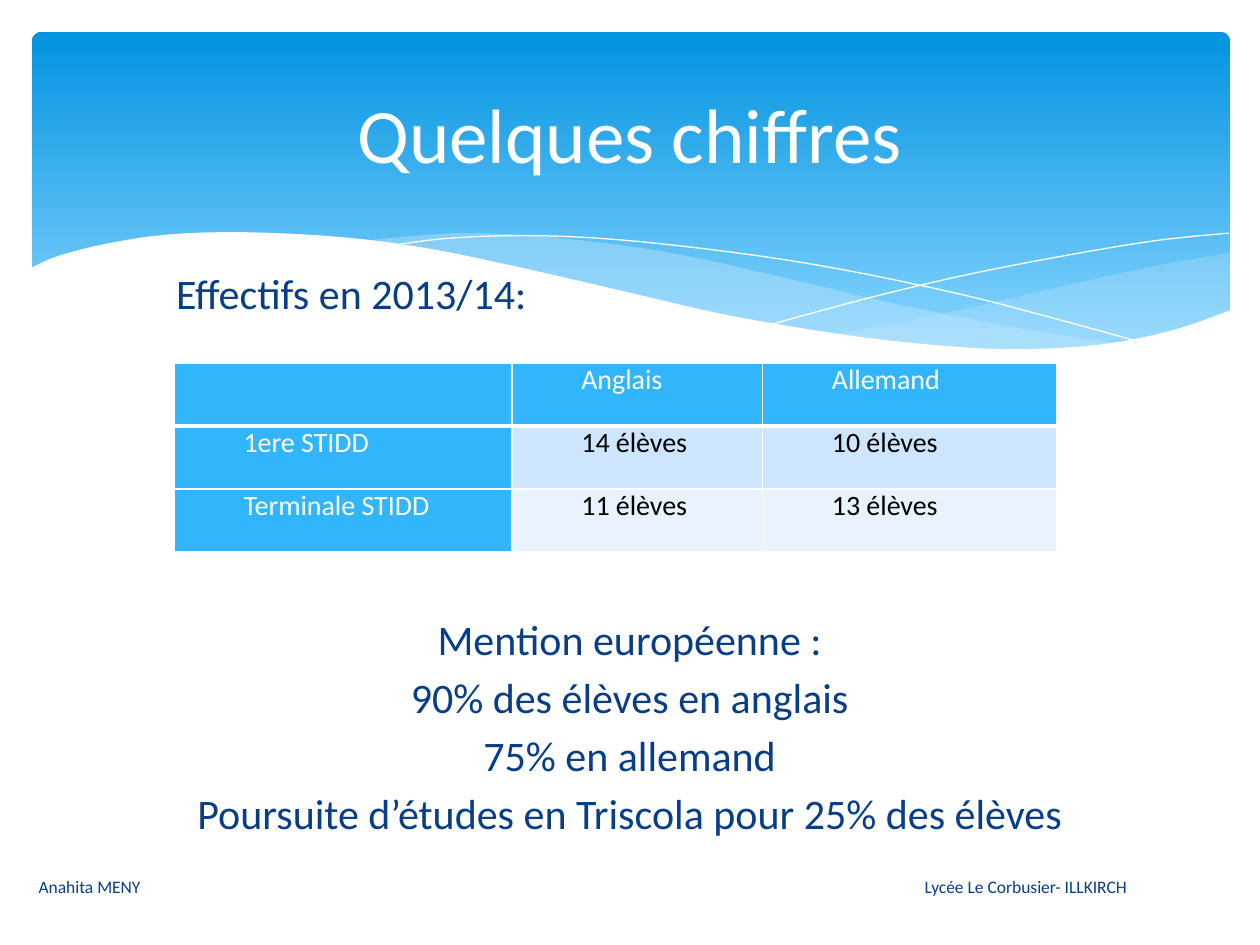
from lxml import etree
from pptx import Presentation
from pptx import util as u
from pptx.dml.color import RGBColor
from pptx.enum import shapes, text
from pptx.oxml.ns import qn

WHITE = RGBColor(0xFF, 0xFF, 0xFF)
BLACK = RGBColor(0, 0, 0)
NAVY = RGBColor(0x07, 0x3E, 0x87)
DEEP = RGBColor(0x02, 0x93, 0xE0)
SKY = RGBColor(0x83, 0xD3, 0xFE)
MIST = RGBColor(0xC6, 0xE7, 0xFC)
CYAN = RGBColor(0x31, 0xB6, 0xFD)
BANDS = [RGBColor(0xCE, 0xE5, 0xFE), RGBColor(0xE8, 0xF3, 0xFF)]

# Banner curves: knots in cm from the banner's top left corner
RIGHT = [
    [(24.15, 4.45), (22.76, 4.7), (21.23, 5.03), (19.15, 5.51), (17.88, 5.79),
     (16.15, 6.1)],
    [(16.15, 6.1), (17.27, 6.25), (18.59, 6.38), (20.04, 6.43), (21.51, 6.32),
     (22.76, 6.1), (23.47, 5.89), (24.15, 5.64)],
]
MIDDLE = [
    [(22.05, 6.3), (19.86, 5.97), (17.3, 5.46), (15.34, 5), (13.46, 4.57),
     (11.79, 4.29), (10.03, 4.11), (8.53, 4.06), (6.63, 4.22)],
    [(6.63, 4.22), (8.05, 4.42), (9.63, 4.72), (11.84, 5.26), (14.2, 5.77),
     (15.88, 6.07), (17.7, 6.32), (19.3, 6.43), (20.65, 6.43), (22.05, 6.3)],
]
FALL = [[(7.21, 4.32), (8.33, 4.17), (9.93, 4.11), (11.79, 4.19), (14.15, 4.45),
         (16.26, 4.78), (18.67, 5.28), (20.47, 5.74), (22.4, 6.27)]]
RISE = [[(14.94, 5.89), (17.02, 5.33), (19.08, 4.85), (21.36, 4.42),
         (22.83, 4.19), (24.13, 4.06)]]
FLOOR = [
    [(24.18, 5.61), (22.99, 6.02), (21.59, 6.3), (19.91, 6.4), (18.26, 6.32),
     (16.33, 6.1), (14.07, 5.72), (12.14, 5.28), (9.98, 4.78), (8, 4.37),
     (6.25, 4.14), (4.27, 4.04), (2.72, 4.09), (1.52, 4.27), (0.53, 4.52),
     (-0.05, 4.78)],
    [(-0.05, 7.72)],
    [(24.18, 7.72)],
]

ROWS = [["", "Anglais", "Allemand"],
        ["1ere STIDD", "14 élèves", "10 élèves"],
        ["Terminale STIDD", "11 élèves", "13 élèves"]]
FACTS = ["Mention européenne :", "90% des élèves en anglais", "75% en allemand",
         "Poursuite d’études en Triscola pour 25% des élèves"]


def write(frame, lines, size, color=NAVY, align=text.PP_ALIGN.LEFT,
          anchor=text.MSO_ANCHOR.TOP, before=0, indent=0, tab=0):
    frame.word_wrap = True
    frame.vertical_anchor = anchor
    for i, line in enumerate(lines):
        para = frame.paragraphs[0] if i == 0 else frame.add_paragraph()
        para.alignment = align
        para.space_before = u.Pt(before)
        run = para.add_run()
        run.text = line
        run.font.name, run.font.size = "Calibri", u.Pt(size)
        run.font.color.rgb = color
        props = para._p.get_or_add_pPr()
        if indent:
            props.set("indent", str(u.Cm(indent)))
        if tab:
            stops = etree.SubElement(props, qn("a:tabLst"))
            etree.SubElement(stops, qn("a:tab"), pos=str(u.Cm(tab)), algn="l")


def label(slide, box, lines, size, **style):
    shape = slide.shapes.add_textbox(*map(u.Cm, box))
    write(shape.text_frame, lines, size, **style)


def ease(knots, steps=4):
    """Catmull-Rom curve through the knots."""
    ends = [knots[0], *knots, knots[-1]]
    pts = [knots[0]]
    for a, b, c, d in zip(ends, ends[1:], ends[2:], ends[3:]):
        for n in range(1, steps + 1):
            t = n / steps
            pts.append(tuple(
                (2 * q + (r - p) * t + (2 * p - 5 * q + 4 * r - s) * t ** 2
                 + (3 * q - p - 3 * r + s) * t ** 3) / 2
                for p, q, r, s in zip(a, b, c, d)))
    return pts


def wave(slide, box, curves, fill=None, alpha=100):
    pts = [(u.Cm(box[0] + x), u.Cm(box[1] + y))
           for knots in curves for x, y in ease(knots)]
    maker = slide.shapes.build_freeform(*pts[0])
    maker.add_line_segments(pts[1:], close=fill is not None)
    shape = maker.convert_to_shape()
    shape.shadow.inherit = False
    if fill is None:
        shape.fill.background()
        shape.line.color.rgb = WHITE
        shape.line.width = u.Pt(0)
        return
    shape.line.fill.background()
    shape.fill.solid()
    shape.fill.fore_color.rgb = fill
    if alpha < 100:
        tint = shape._element.spPr.find(qn("a:solidFill"))[0]
        etree.SubElement(tint, qn("a:alpha"), val=str(alpha * 1000))


def banner(slide, box):
    # Rounded panel, darker at the top
    panel = slide.shapes.add_shape(shapes.MSO_SHAPE.ROUNDED_RECTANGLE,
                                   *map(u.Cm, box))
    panel.adjustments[0] = 0.03
    panel.shadow.inherit = False
    panel.line.fill.background()
    panel.fill.gradient()
    panel.fill.gradient_angle = 270
    for stop, color, place in zip(panel.fill.gradient_stops, (DEEP, SKY), (0, 0.9)):
        stop.color.rgb, stop.position = color, place
    # Waves and hairlines, then the white edge
    wave(slide, box, RIGHT, MIST, 29)
    wave(slide, box, MIDDLE, MIST, 40)
    wave(slide, box, FALL)
    wave(slide, box, RISE)
    wave(slide, box, FLOOR, WHITE)


def edge(cell, bottom):
    props = cell._tc.get_or_add_tcPr()
    for i, side in enumerate(("lnL", "lnR", "lnT", "lnB")):
        width = bottom if side == "lnB" else 1
        line = etree.Element(qn("a:" + side), w=str(u.Pt(width)))
        fill = etree.SubElement(line, qn("a:solidFill"))
        etree.SubElement(fill, qn("a:srgbClr"), val=str(WHITE))
        props.insert(i, line)


def grid(slide, box, widths):
    table = slide.shapes.add_table(len(ROWS), len(widths), *map(u.Cm, box)).table
    for col, width in zip(table.columns, widths):
        col.width = u.Cm(width)
    for r, row in enumerate(ROWS):
        table.rows[r].height = u.Cm(box[3] / len(ROWS))
        for c, word in enumerate(row):
            cell = table.cell(r, c)
            head = r == 0 or c == 0
            cell.fill.solid()
            cell.fill.fore_color.rgb = CYAN if head else BANDS[r - 1]
            cell.margin_left = cell.margin_right = u.Cm(0.18)
            cell.margin_top = cell.margin_bottom = 0
            edge(cell, 3 if r == 0 else 1)
            if word:
                write(cell.text_frame, [word], 16, color=WHITE if head else BLACK,
                      align=text.PP_ALIGN.JUSTIFY, indent=1.22)


def main():
    deck = Presentation()
    deck.slide_width, deck.slide_height = u.Cm(25.4), u.Cm(19.05)
    slide = deck.slides.add_slide(deck.slide_layouts[6])
    mid, center = text.MSO_ANCHOR.MIDDLE, text.PP_ALIGN.CENTER

    banner(slide, (0.64, 0.64, 24.16, 6.86))
    label(slide, (1.27, 0.94, 22.86, 3.48), ["Quelques chiffres"], 44,
          color=WHITE, align=center, anchor=mid)
    grid(slide, (3.51, 7.32, 17.8, 3.81), (6.81, 5.05, 5.94))
    label(slide, (3.3, 5.26, 10.01, 1.27), ["Effectifs en 2013/14:"], 24)
    # Results, resting on the bottom of their box
    label(slide, (2.41, 7.44, 20.57, 9.58), FACTS, 24, align=center,
          anchor=text.MSO_ANCHOR.BOTTOM, before=4.3)
    # Footer: author, then school at a tab stop
    label(slide, (0.53, 17.37, 24.56, 1.02),
          ["Anahita MENY\tLycée Le Corbusier- ILLKIRCH"], 10, anchor=mid, tab=17.86)
    deck.save("out.pptx")


if __name__ == "__main__":
    main()
